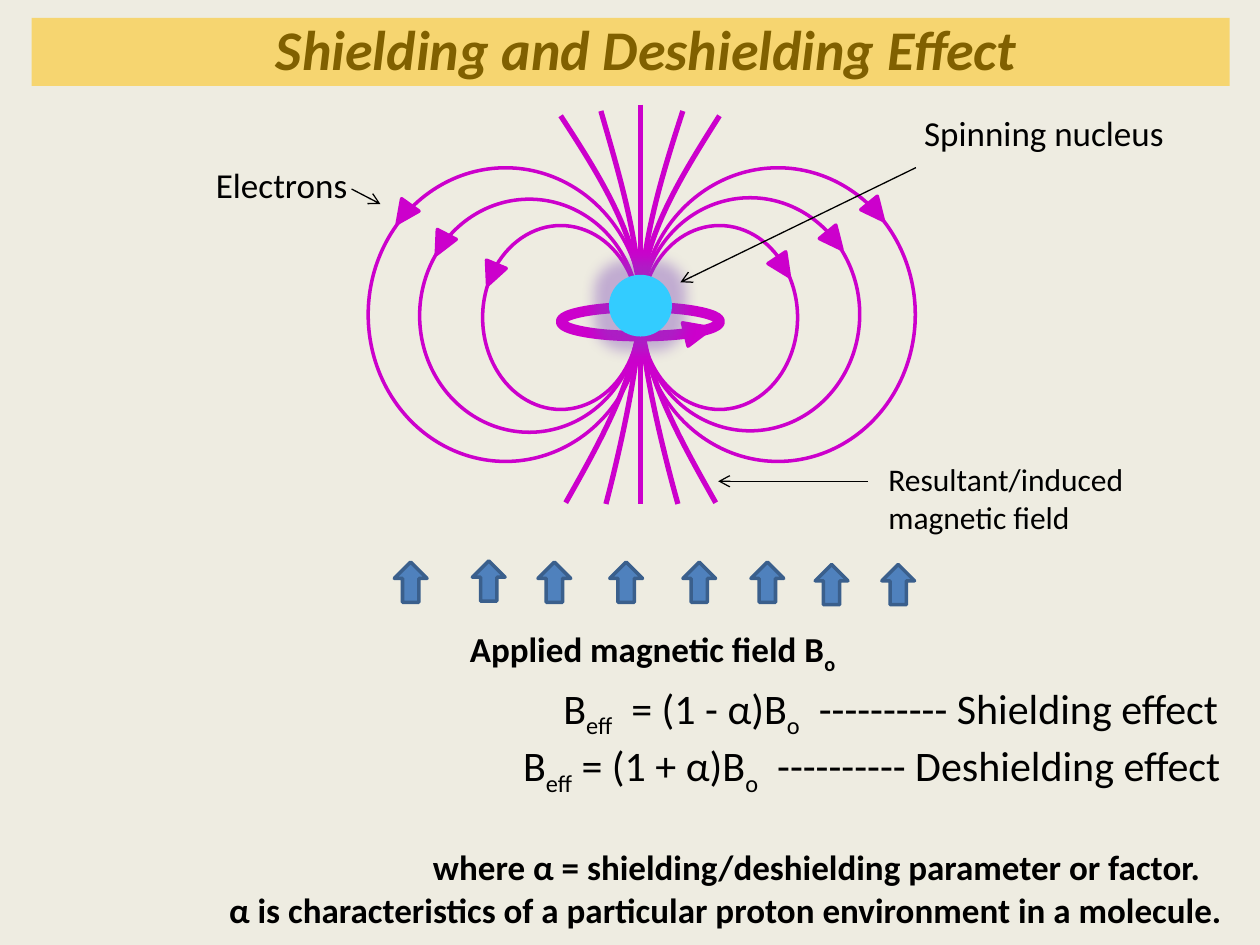
from typing import NamedTuple

from lxml.etree import SubElement
from pptx import Presentation
from pptx.dml.color import RGBColor
from pptx.enum.shapes import MSO_CONNECTOR as Connector
from pptx.enum.shapes import MSO_SHAPE as Preset
from pptx.enum.text import MSO_ANCHOR as Anchor
from pptx.enum.text import MSO_AUTO_SIZE as AutoSize
from pptx.enum.text import PP_ALIGN as Align
from pptx.oxml.ns import qn
from pptx.util import Pt

BLACK, MAGENTA, BLUE, NAVY = "000000", "CC00CC", "4F81BD", "3A5F8C"
AXIS = 366


class Frame(NamedTuple):
    left: float
    top: float
    width: float
    height: float


class Point(NamedTuple):
    x: float
    y: float


class Head(NamedTuple):
    frame: Frame
    turn: float


class Formula(NamedTuple):
    indent: float
    before: float
    size: float
    bold: bool
    spans: list[str]


LOOPS = [
    Frame(210.4, 95.9, 157, 167.8), Frame(239.8, 113.8, 125.3, 133.2),
    Frame(275.8, 128.9, 89.3, 105.1), Frame(366, 95.9, 157, 167.8),
    Frame(366, 113, 125.3, 133.2), Frame(366.5, 128.9, 89.3, 105.1),
]
HEADS = [
    Head(Frame(224.6, 115.9, 12.2, 13), 215.3),
    Head(Frame(246.2, 133.2, 12.2, 13), 207.5),
    Head(Frame(275, 150.5, 12.2, 13), 202.7),
    Head(Frame(494.6, 114.5, 12.2, 13), 140.7),
    Head(Frame(470.9, 131, 12.2, 13), 140.7),
    Head(Frame(441.4, 146.2, 12.2, 13), 146.5),
]
FIELD_LINES = [
    [Point(343.4, 63.4), Point(354.2, 100.8), Point(365.8, 139), Point(365.8, 176.4),
     Point(366.2, 213.8), Point(346.3, 288), Point(346.3, 288)],
    [Point(320.4, 66.2), Point(343.4, 101.5), Point(365.8, 136.8), Point(365.8, 174.2),
     Point(366.2, 211), Point(344.9, 249.1), Point(323.3, 287.3)],
    [Point(411.1, 66.2), Point(388.8, 101.5), Point(366.5, 136.8), Point(366, 174.2),
     Point(366, 211), Point(387.4, 249.1), Point(409, 287.3)],
    [Point(390.2, 63.4), Point(378, 100.8), Point(366.5, 139), Point(366, 176.4),
     Point(366, 213.8), Point(387.4, 288), Point(387.4, 288)],
]
APPLIED = [Point(223.2, 323.3), Point(267.8, 322.6), Point(305.3, 323.3), Point(346.3, 323.3),
           Point(388.1, 323.3), Point(427, 323.3), Point(463.7, 324.7), Point(501.8, 324.7)]
FORMULAS = [
    Formula(286, 0, 24, False, ["B", "eff", "  = (1 - α)B", "o", "  ---------- Shielding effect"]),
    Formula(263, 0, 24, False, ["B", "eff", " = (1 + α)B", "o", "  ---------- Deshielding effect"]),
    Formula(211.5, 27.5, 20, True, ["where α = shielding/deshielding parameter or factor."]),
    Formula(95, 1, 20, True,
            ["α is characteristics of a particular proton environment in a molecule."]),
]


def color(value: str) -> RGBColor:
    return RGBColor.from_string(value)


def apply(target, **values) -> None:
    for name, value in values.items():
        setattr(target, name, value)


def place(shape, frame: Frame) -> None:
    apply(shape, **{name: Pt(value) for name, value in frame._asdict().items()})


def paint(shape, fill: str = "", line: str = "", weight: float = 2) -> None:
    shape.shadow.inherit = False
    if fill:
        shape.fill.solid()
        shape.fill.fore_color.rgb = color(fill)
    else:
        shape.fill.background()
    if line:
        shape.line.color.rgb = color(line)
        shape.line.width = Pt(weight)
    else:
        shape.line.fill.background()


def add_preset(page, preset, frame: Frame, turn: float = 0, **style):
    shape = page.shapes.add_shape(preset, *map(Pt, frame))
    shape.rotation = turn
    paint(shape, **style)
    return shape


def add_line(page, start: Point, end: Point, line: str, weight: float, arrow: bool = False) -> None:
    connector = page.shapes.add_connector(Connector.STRAIGHT, *map(Pt, start + end))
    connector.line.color.rgb = color(line)
    connector.line.width = Pt(weight)
    if arrow:
        SubElement(connector.line._get_or_add_ln(), qn("a:tailEnd"), type="arrow")
    SubElement(connector._element.spPr, qn("a:effectLst"))


def add_curve(page, nodes: list[Point]) -> None:
    builder = page.shapes.build_freeform(*map(Pt, nodes[0]))
    builder.add_line_segments([tuple(map(Pt, node)) for node in nodes[3::3]], close=False)
    curve = builder.convert_to_shape()
    outline = curve._element.find(".//" + qn("a:path"))
    for segment in outline.findall(qn("a:lnTo")):
        outline.remove(segment)
    for first in (1, 4):
        bend = SubElement(outline, qn("a:cubicBezTo"))
        for node in nodes[first:first + 3]:
            SubElement(bend, qn("a:pt"), x=str(Pt(node.x) - curve.left), y=str(Pt(node.y) - curve.top))
    paint(curve, line=MAGENTA, weight=3)


def write(para, spans: list[str], size: float, **style) -> None:
    for index, text in enumerate(spans):
        span = para.add_run()
        span.text = text
        apply(span.font, name="Calibri", size=Pt(size), **style)
        span.font.color.rgb = color(BLACK)
        if index % 2:
            span.font._element.set("baseline", "-25000")


def add_box(page, frame: Frame, wrap: bool = True):
    box = page.shapes.add_textbox(*map(Pt, frame))
    box.text_frame.word_wrap = wrap
    return box.text_frame


def add_label(page, frame: Frame, spans: list[str], size: float, wrap: bool = True, **style) -> None:
    write(add_box(page, frame, wrap).paragraphs[0], spans, size, **style)


def add_title(page) -> None:
    title = page.shapes.title
    place(title, Frame(150.5, 4.7, 443.5, 46))
    apply(title.text_frame, word_wrap=True, vertical_anchor=Anchor.TOP, auto_size=AutoSize.NONE)
    para = title.text_frame.paragraphs[0]
    para.alignment = Align.LEFT
    write(para, ["Shielding and Deshielding Effect"], 32, bold=True, italic=True)
    band = add_preset(page, Preset.RECTANGLE, Frame(18, 10.3, 684.7, 38.9), fill="FFC000")
    SubElement(band.fill._xPr.find(".//" + qn("a:srgbClr")), qn("a:alpha"), val="50000")


def add_field(page) -> None:
    for loop in LOOPS:
        add_preset(page, Preset.OVAL, loop, line=MAGENTA)
    add_line(page, Point(AXIS, 59.8), Point(AXIS, 288), MAGENTA, 3)
    for nodes in FIELD_LINES:
        add_curve(page, nodes)
    for head in HEADS:
        add_preset(page, Preset.ISOSCELES_TRIANGLE, head.frame, head.turn, fill=MAGENTA, line=MAGENTA)


def add_nucleus(page) -> None:
    add_preset(page, Preset.OVAL, Frame(320.6, 175.5, 90.7, 16.6), line=MAGENTA, weight=6)
    add_preset(page, Preset.ISOSCELES_TRIANGLE, Frame(392.4, 181.4, 13.7, 15.8), 76.5,
               fill=MAGENTA, line=MAGENTA)
    add_label(page, Frame(521, 60.2, 152.6, 31.7), ["Spinning nucleus"], 20, wrap=False)
    nucleus = add_preset(page, Preset.OVAL, Frame(348, 157, 36, 35.3), fill="33CCFF")
    effects = nucleus._element.spPr.find(qn("a:effectLst"))
    glow = SubElement(effects, qn("a:glow"), rad=str(Pt(16)))
    tint = SubElement(glow, qn("a:srgbClr"), val="7E4CBA")
    SubElement(tint, qn("a:alpha"), val="40000")


def add_formulas(page) -> None:
    frame = add_box(page, Frame(28.8, 386.3, 678.2, 143.3))
    frame.margin_right = 0
    for index, formula in enumerate(FORMULAS):
        para = frame.add_paragraph() if index else frame.paragraphs[0]
        para.space_before = Pt(formula.before)
        para._p.get_or_add_pPr().set("marL", str(Pt(formula.indent)))
        write(para, formula.spans, formula.size, bold=formula.bold)


def main() -> None:
    deck = Presentation()
    apply(deck, slide_width=Pt(720), slide_height=Pt(540))
    page = deck.slides.add_slide(deck.slide_layouts[5])
    page.background.fill.solid()
    page.background.fill.fore_color.rgb = color("EEECE1")
    add_title(page)
    add_label(page, Frame(116.3, 89.7, 90.7, 31.7), ["Electrons"], 20, wrap=False)
    add_field(page)
    add_nucleus(page)
    add_line(page, Point(200.9, 108), Point(217.4, 116.6), BLACK, 0.75, arrow=True)
    add_line(page, Point(523.4, 95.8), Point(388.8, 161.3), BLACK, 0.75, arrow=True)
    add_label(page, Frame(261.4, 355, 240.5, 31.7), ["Applied magnetic field B", "o"], 20, bold=True)
    for corner in APPLIED:
        add_preset(page, Preset.RIGHT_ARROW, Frame(*corner, 23, 18.7), 270, fill=BLUE, line=NAVY)
    add_label(page, Frame(500.6, 259.2, 201.6, 51.1), ["Resultant/induced magnetic field"], 18)
    add_line(page, Point(496.1, 275), Point(410.4, 275), BLACK, 0.75, arrow=True)
    add_formulas(page)
    deck.save("out.pptx")


if __name__ == "__main__":
    main()
